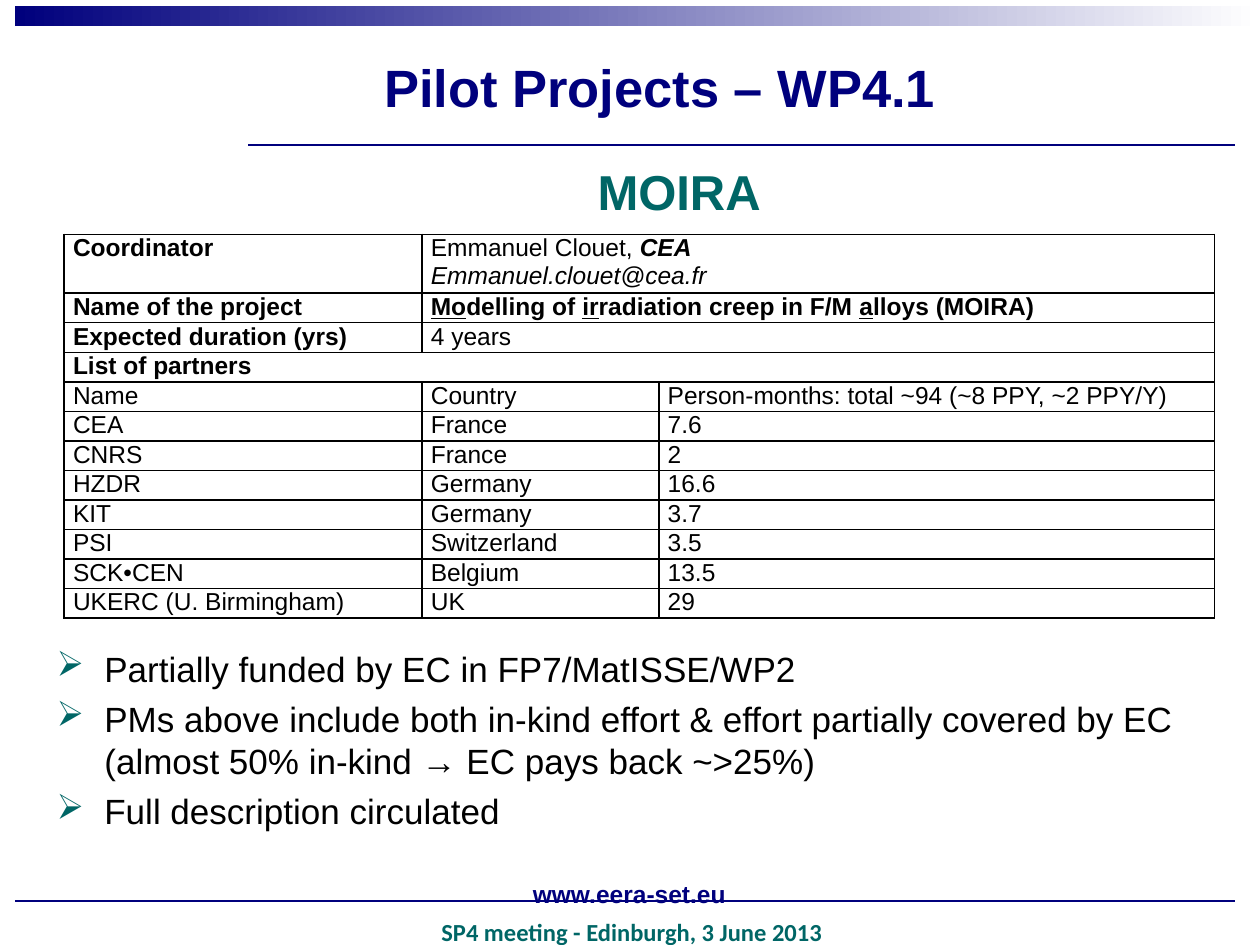
from dataclasses import dataclass

from lxml.etree import SubElement
from pptx import Presentation
from pptx.dml.color import RGBColor
from pptx.enum.shapes import MSO_CONNECTOR, MSO_SHAPE
from pptx.enum.text import MSO_ANCHOR, PP_ALIGN
from pptx.oxml.ns import qn
from pptx.util import Inches, Pt


@dataclass(frozen=True)
class Theme:
    navy: str = "00007D"
    teal: str = "006666"
    black: str = "000000"
    white: str = "FFFFFF"
    font: str = "Arial"
    footer_font: str = "Calibri"
    title: int = 30
    heading: int = 28
    body: int = 20
    small: int = 14
    bullet_gap: float = 4.6


THEME = Theme()

# Each table row lists its cells; a cell lists paragraphs of (text, style) spans.
# Styles: b bold, i italic, u underlined.
PROJECT = [
    ([[("Coordinator", "b")]],
     [[("Emmanuel Clouet, ", ""), ("CEA", "bi")], [("Emmanuel.clouet@cea.fr", "i")]]),
    ([[("Name of the project", "b")]],
     [[("Mo", "bu"), ("delling of ", "b"), ("ir", "bu"),
       ("radiation creep in F/M ", "b"), ("a", "bu"), ("lloys (MOIRA)", "b")]]),
    ([[("Expected duration (yrs)", "b")]], [[("4 years", "")]]),
    ([[("List of partners", "b")]],),
]
PARTNERS = [
    ("Name", "Country", "Person-months: total ~94 (~8 PPY, ~2 PPY/Y)"),
    ("CEA", "France", "7.6"),
    ("CNRS", "France", "2"),
    ("HZDR", "Germany", "16.6"),
    ("KIT", "Germany", "3.7"),
    ("PSI", "Switzerland", "3.5"),
    ("SCK•CEN", "Belgium", "13.5"),
    ("UKERC (U. Birmingham)", "UK", "29"),
]
REMARKS = [
    "Partially funded by EC in FP7/MatISSE/WP2",
    "PMs above include both in-kind effort & effort partially covered by EC "
    "(almost 50% in-kind → EC pays back ~>25%)",
    "Full description circulated",
]


def color(value):
    return RGBColor.from_string(value)


def set_font(font, size, value, bold=False, name=THEME.font):
    font.name, font.size, font.bold = name, Pt(size), bold
    font.color.rgb = color(value)


def add_rule(page, left, right, y):
    rule = page.shapes.add_connector(
        MSO_CONNECTOR.STRAIGHT, Inches(left), Inches(y), Inches(right), Inches(y))
    rule.line.color.rgb = color(THEME.navy)
    rule.line.width = Pt(1)
    SubElement(rule._element.spPr, qn("a:effectLst"))


def add_gradient_bar(page, left, top, width, height):
    bar = page.shapes.add_shape(
        MSO_SHAPE.RECTANGLE, Inches(left), Inches(top), Inches(width), Inches(height))
    bar.shadow.inherit = False
    bar.line.fill.background()
    bar.fill.gradient()
    bar.fill.gradient_angle = 0
    for stop, value in zip(bar.fill.gradient_stops, (THEME.navy, THEME.white)):
        stop.color.rgb = color(value)


def add_box(page, left, top, width, height, anchor=MSO_ANCHOR.TOP):
    box = page.shapes.add_textbox(Inches(left), Inches(top), Inches(width), Inches(height))
    box.text_frame.word_wrap = True
    box.text_frame.vertical_anchor = anchor
    return box.text_frame


def add_heading(page, text, place, size, value, anchor=MSO_ANCHOR.TOP, name=THEME.font):
    para = add_box(page, *place, anchor).paragraphs[0]
    para.text = text
    para.alignment = PP_ALIGN.CENTER
    set_font(para.font, size, value, True, name)


def add_bullets(page, texts, place):
    frame = add_box(page, *place)
    for index, text in enumerate(texts):
        para = frame.add_paragraph() if index else frame.paragraphs[0]
        para.text = text
        properties = para._p.get_or_add_pPr()
        properties.set("marL", str(Inches(0.38)))
        properties.set("indent", str(-Inches(0.38)))
        bullet_color = SubElement(properties, qn("a:buClr"))
        SubElement(bullet_color, qn("a:srgbClr"), val=THEME.teal)
        SubElement(properties, qn("a:buChar"), char="➢")
        if index:
            para.space_before = Pt(THEME.bullet_gap)
        set_font(para.font, THEME.body, THEME.black)


def style_cell(cell):
    cell.margin_left = cell.margin_right = Inches(0.07)
    cell.margin_top = cell.margin_bottom = 0
    properties = cell._tc.get_or_add_tcPr()
    for side in ("lnL", "lnR", "lnT", "lnB"):
        border = SubElement(properties, qn(f"a:{side}"), w=str(Pt(1)))
        fill = SubElement(border, qn("a:solidFill"))
        SubElement(fill, qn("a:srgbClr"), val=THEME.black)
    cell.fill.background()


def fill_cell(cell, paragraphs):
    for index, spans in enumerate(paragraphs):
        frame = cell.text_frame
        para = frame.add_paragraph() if index else frame.paragraphs[0]
        for text, style in spans:
            span = para.add_run()
            span.text = text
            set_font(span.font, THEME.small, THEME.black, "b" in style)
            span.font.italic = "i" in style
            span.font.underline = "u" in style


def add_project_table(page):
    rows = PROJECT + [tuple([[(text, "")]] for text in row) for row in PARTNERS]
    widths = (2.84, 1.88, 4.41)
    height, first_height = 3.04, 0.46
    table = page.shapes.add_table(
        len(rows), len(widths), Inches(0.51), Inches(1.86),
        Inches(sum(widths)), Inches(height)).table
    table.first_row = table.horz_banding = False
    for column, width in zip(table.columns, widths):
        column.width = Inches(width)
    row_height = (height - first_height) / (len(rows) - 1)
    for index, cells in enumerate(rows):
        table.rows[index].height = Inches(row_height if index else first_height)
        for cell in table.rows[index].cells:
            style_cell(cell)
        for position, paragraphs in enumerate(cells):
            fill_cell(table.cell(index, position), paragraphs)
        # The last cell of a short row spans the remaining columns
        if len(cells) < len(widths):
            table.cell(index, len(cells) - 1).merge(table.cell(index, len(widths) - 1))


def main():
    deck = Presentation()
    deck.slide_width, deck.slide_height = Inches(10), Inches(7.5)
    page = deck.slides.add_slide(deck.slide_layouts[6])

    # Frame: rules, top bar and footer
    add_rule(page, 0.12, 9.8, 7.15)
    add_rule(page, 2.56, 9.8, 1.15)
    add_gradient_bar(page, 0.12, 0.05, 9.88, 0.16)
    add_rule(page, 1.97, 2.56, 1.15)
    add_heading(page, "SP4 meeting - Edinburgh, 3 June 2013", (1.46, 7.23, 7.11, 0.34),
                THEME.small, THEME.teal, name=THEME.footer_font)

    # Title, web address and project name
    add_heading(page, "Pilot Projects – WP4.1", (2.01, 0.36, 6.46, 0.65),
                THEME.title, THEME.navy, MSO_ANCHOR.MIDDLE)
    add_heading(page, "www.eera-set.eu", (3.41, 6.76, 3.17, 0.5),
                THEME.small, THEME.navy, MSO_ANCHOR.BOTTOM)
    add_heading(page, "MOIRA", (3.5, 1.23, 3.78, 0.57), THEME.heading, THEME.teal)

    # Project facts and remarks
    add_project_table(page)
    add_bullets(page, REMARKS, (0.35, 5.09, 9.29, 1.65))
    deck.save("out.pptx")


if __name__ == "__main__":
    main()
